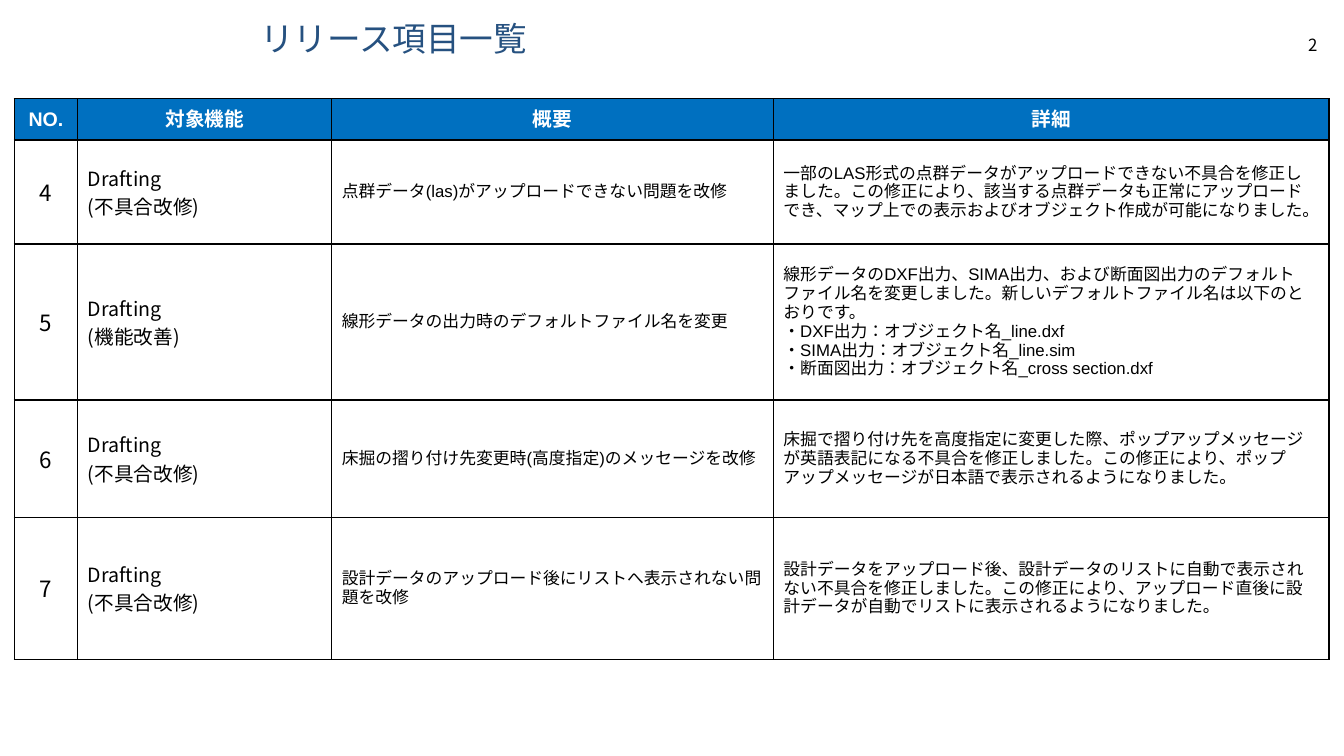
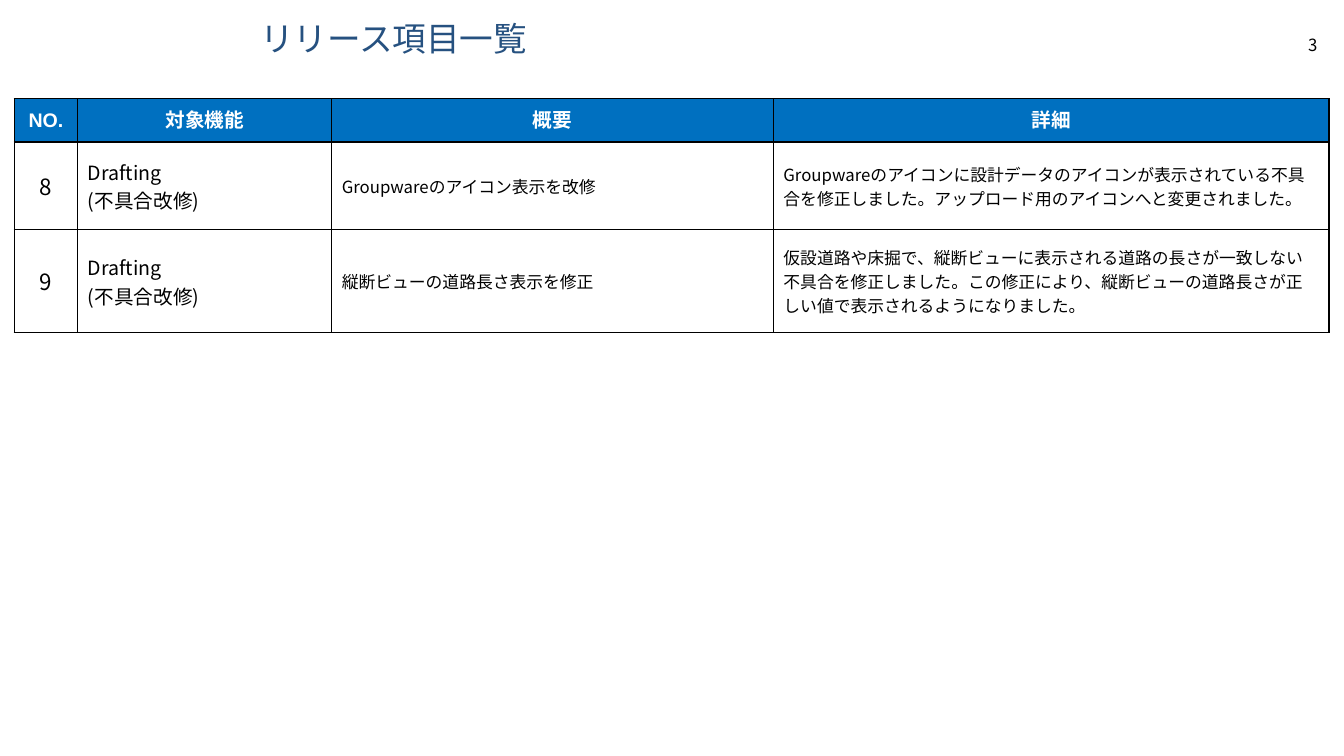
from dataclasses import dataclass

from lxml.etree import SubElement
from pptx import Presentation
from pptx.dml.color import RGBColor
from pptx.enum.lang import MSO_LANGUAGE_ID
from pptx.enum.text import MSO_ANCHOR, MSO_AUTO_SIZE, PP_ALIGN
from pptx.oxml.ns import qn
from pptx.util import Cm, Pt


@dataclass(frozen=True)
class Theme:
    title: RGBColor = RGBColor(0x26, 0x51, 0x80)
    header: RGBColor = RGBColor(0x00, 0x70, 0xC0)
    text: RGBColor = RGBColor(0x00, 0x00, 0x00)
    white: RGBColor = RGBColor(0xFF, 0xFF, 0xFF)
    latin: str = "Arial"
    japanese: str = "Noto Sans CJK JP"
    title_size: int = 24
    number_size: int = 16
    label_size: int = 14
    text_size: int = 12
    border: int = 1


T = Theme()
TITLE = "リリース項目一覧"
HEADERS = ["NO.", "対象機能", "概要", "詳細"]
COL_WIDTHS = [1.6, 6.4, 11.13, 14.0]
FIX = "Drafting\n(不具合改修)"
IMPROVE = "Drafting\n(機能改善)"

# Each slide: text font, row heights in cm, table rows
SLIDES = [
    (T.latin, [1.04, 2.62, 3.93, 2.95, 3.58], [
        ["4", FIX, "点群データ(las)がアップロードできない問題を改修",
         "一部のLAS形式の点群データがアップロードできない不具合を修正しました。"
         "この修正により、該当する点群データも正常にアップロードでき、"
         "マップ上での表示およびオブジェクト作成が可能になりました。"],
        ["5", IMPROVE, "線形データの出力時のデフォルトファイル名を変更",
         "線形データのDXF出力、SIMA出力、および断面図出力のデフォルトファイル名を変更しました。"
         "新しいデフォルトファイル名は以下のとおりです。\n"
         "・DXF出力：オブジェクト名_line.dxf\n"
         "・SIMA出力：オブジェクト名_line.sim\n"
         "・断面図出力：オブジェクト名_cross section.dxf"],
        ["6", FIX, "床掘の摺り付け先変更時(高度指定)のメッセージを改修",
         "床掘で摺り付け先を高度指定に変更した際、ポップアップメッセージが英語表記になる"
         "不具合を修正しました。この修正により、ポップアップメッセージが日本語で"
         "表示されるようになりました。"],
        ["7", FIX, "設計データのアップロード後にリストへ表示されない問題を改修",
         "設計データをアップロード後、設計データのリストに自動で表示されない不具合を"
         "修正しました。この修正により、アップロード直後に設計データが自動でリストに"
         "表示されるようになりました。"],
    ]),
    (T.japanese, [1.09, 2.21, 2.59], [
        ["8", FIX, "Groupwareのアイコン表示を改修",
         "Groupwareのアイコンに設計データのアイコンが表示されている不具合を修正しました。"
         "アップロード用のアイコンへと変更されました。"],
        ["9", FIX, "縦断ビューの道路長さ表示を修正",
         "仮設道路や床掘で、縦断ビューに表示される道路の長さが一致しない不具合を"
         "修正しました。この修正により、縦断ビューの道路長さが正しい値で"
         "表示されるようになりました。"],
    ]),
]


def style_text(tf, size, color, font, align=PP_ALIGN.LEFT, bold=False):
    for p in tf.paragraphs:
        p.alignment = align
        for r in p.runs:
            f = r.font
            f.size, f.bold, f.name = Pt(size), bold, font
            f.color.rgb = color
            f.language_id = MSO_LANGUAGE_ID.JAPANESE
            SubElement(r._r.get_or_add_rPr(), qn("a:ea"), typeface=font)


def style_cell(cell, fill):
    """Centre the cell vertically, draw its four borders and fill it."""
    cell.vertical_anchor = MSO_ANCHOR.MIDDLE
    tc_pr = cell._tc.get_or_add_tcPr()
    for side in ("lnL", "lnR", "lnT", "lnB"):
        ln = SubElement(tc_pr, qn(f"a:{side}"), w=str(Pt(T.border)))
        SubElement(SubElement(ln, qn("a:solidFill")), qn("a:srgbClr"), val=str(T.text))
    cell.fill.solid()
    cell.fill.fore_color.rgb = fill


prs = Presentation()
prs.slide_width, prs.slide_height = Cm(33.87), Cm(19.05)
first_number = 2
prs.element.set("firstSlideNum", str(first_number))

for number, (font, heights, rows) in enumerate(SLIDES, first_number):
    s = prs.slides.add_slide(prs.slide_layouts[5])

    title = s.shapes.title
    title.left, title.top, title.width, title.height = Cm(6.3), Cm(0.5), Cm(22.66), Cm(1.07)
    tf = title.text_frame
    tf.text = TITLE
    tf.auto_size = MSO_AUTO_SIZE.NONE
    tf.vertical_anchor = MSO_ANCHOR.MIDDLE
    tf.paragraphs[0].line_spacing = 0.9
    style_text(tf, T.title_size, T.title, T.latin)

    # The page number is a live field built from a formatted run
    tf = s.shapes.add_textbox(Cm(31.7), Cm(0.76), Cm(1.75), Cm(0.76)).text_frame
    tf.word_wrap = True
    tf.text = str(number)
    style_text(tf, T.text_size, T.text, T.japanese, PP_ALIGN.RIGHT)
    run = tf.paragraphs[0].runs[0]._r
    field = SubElement(run.getparent(), qn("a:fld"), type="slidenum",
                       id="{B6F15528-21DE-4FAA-801E-634DDDAF4B2B}")
    field.extend(list(run))
    run.getparent().remove(run)

    table = s.shapes.add_table(len(heights), len(HEADERS), Cm(0.36), Cm(2.49),
                               Cm(sum(COL_WIDTHS)), Cm(sum(heights))).table
    table.horz_banding = False
    for col, width in zip(table.columns, COL_WIDTHS):
        col.width = Cm(width)
    for row, height in zip(table.rows, heights):
        row.height = Cm(height)

    body_styles = [
        (T.number_size, T.text, T.japanese, PP_ALIGN.CENTER),
        (T.label_size, T.text, T.japanese),
        (T.text_size, T.text, font),
        (T.text_size, T.text, font),
    ]
    header_styles = [(T.label_size, T.white, T.latin, PP_ALIGN.CENTER, True)] * len(HEADERS)
    for i, texts in enumerate([HEADERS] + rows):
        styles = body_styles if i else header_styles
        for j, (text, style) in enumerate(zip(texts, styles)):
            cell = table.cell(i, j)
            cell.text_frame.text = text
            style_text(cell.text_frame, *style)
            style_cell(cell, T.white if i else T.header)

prs.save("out.pptx")
